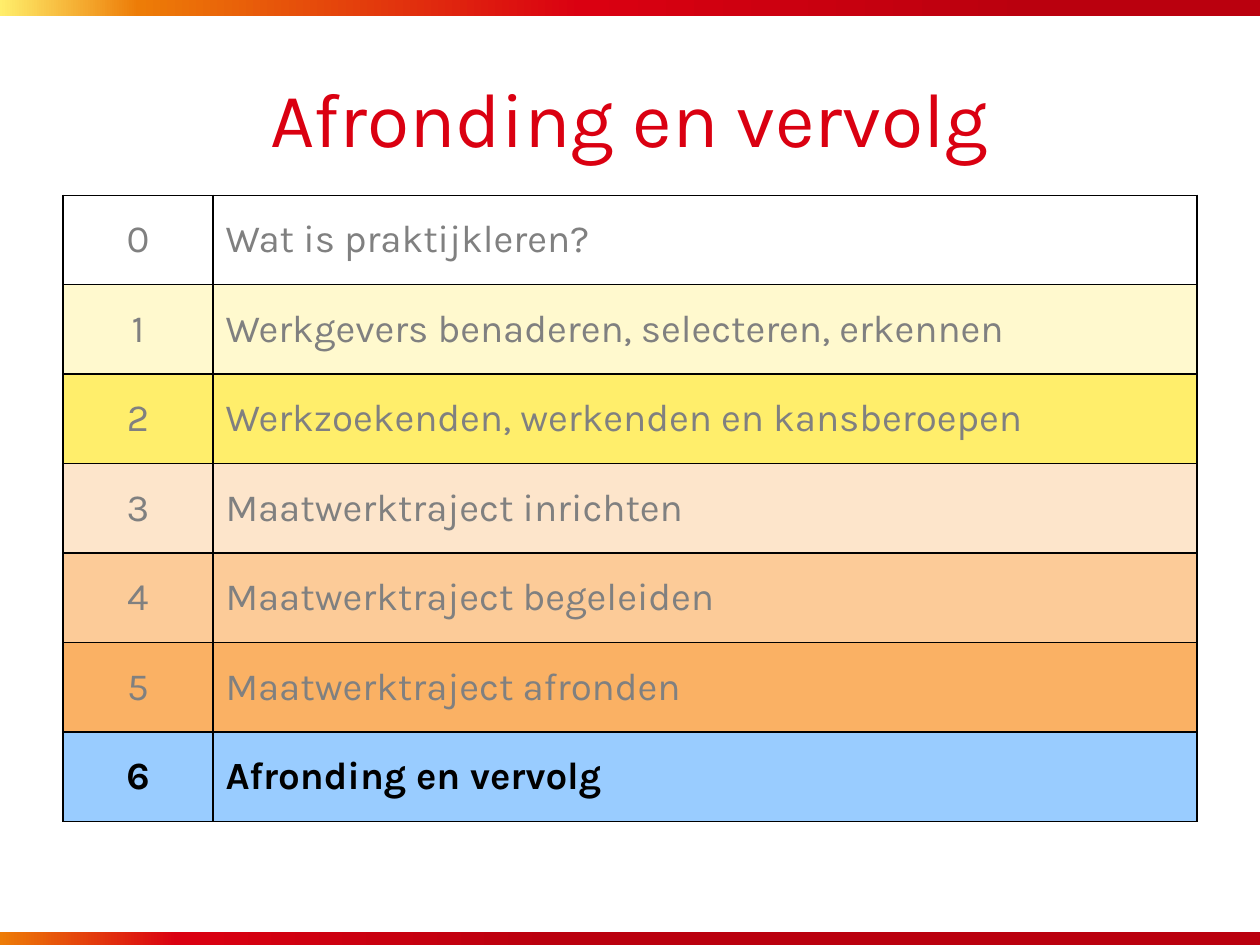
"""Build the agenda slide with its last chapter highlighted."""
from dataclasses import dataclass

from lxml.etree import SubElement
from pptx import Presentation
from pptx.dml.color import RGBColor as Rgb
from pptx.enum.shapes import MSO_SHAPE as Shape
from pptx.enum.text import MSO_ANCHOR as Anchor, PP_ALIGN as Align
from pptx.oxml.ns import qn
from pptx.util import Inches, Pt

TITLE = "Afronding en vervolg"
CHAPTERS = [
    ("Wat is praktijkleren?", None),
    ("Werkgevers benaderen, selecteren, erkennen", "FFF9CE"),
    ("Werkzoekenden, werkenden en kansberoepen", "FFEE6B"),
    ("Maatwerktraject inrichten", "FDE5CB"),
    ("Maatwerktraject begeleiden", "FCCB98"),
    ("Maatwerktraject afronden", "FAB164"),
    ("Afronding en vervolg", "99CCFF"),
]
CURRENT = len(CHAPTERS) - 1
BANDS = [
    (0, [(0, "FFEE6B"), (11, "ED7C07"), (46, "DA0011"), (82, "BA000E")]),
    (7.4, [(0, "ED7C07"), (14, "DA0011"), (44, "BA000E")]),
]


@dataclass(frozen=True)
class Theme:
    font: str = "Karla"
    title: str = "DA0011"
    muted: str = "808080"
    active: str = "000000"
    border: str = "000000"
    title_size: int = 44
    cell_size: int = 22
    border_width: int = 1


THEME = Theme()
WIDTH, HEIGHT = 10, 7.5
MARGIN = WIDTH / 20
CONTENT_WIDTH = WIDTH - 2 * MARGIN
TITLE_TOP, AGENDA_TOP = 0.3, 1.55
ROW_HEIGHT = 0.71
NUMBER_WIDTH = 1.19
BAND_WIDTH, BAND_HEIGHT = 10.02, 0.13


def style(paragraph, size, color, align, bold=False):
    paragraph.alignment = align
    font = paragraph.font
    font.name, font.size, font.bold = THEME.font, Pt(size), bold
    font.color.rgb = Rgb.from_string(color)


def add_band(slide, top, stops):
    band = slide.shapes.add_shape(
        Shape.RECTANGLE, 0, Inches(top), Inches(BAND_WIDTH), Inches(BAND_HEIGHT))
    band.shadow.inherit = False
    band.line.fill.background()
    band.fill.gradient()
    band.fill.gradient_angle = 0
    stop_list = band.element.spPr.find(".//" + qn("a:gsLst"))
    stop_list.clear()
    for percent, color in stops:
        stop = SubElement(stop_list, qn("a:gs"), pos=str(percent * 1000))
        SubElement(stop, qn("a:srgbClr"), val=color)


def add_title(slide):
    title = slide.shapes.add_textbox(
        Inches(MARGIN), Inches(TITLE_TOP), Inches(CONTENT_WIDTH), Inches(AGENDA_TOP - TITLE_TOP))
    frame = title.text_frame
    frame.word_wrap, frame.vertical_anchor = True, Anchor.MIDDLE
    frame.text = TITLE
    style(frame.paragraphs[0], THEME.title_size, THEME.title, Align.CENTER)


def add_borders(cell):
    properties = cell._tc.get_or_add_tcPr()
    for side in ("L", "R", "T", "B"):
        edge = SubElement(properties, qn(f"a:ln{side}"), w=str(Pt(THEME.border_width)))
        SubElement(SubElement(edge, qn("a:solidFill")), qn("a:srgbClr"), val=THEME.border)


def add_agenda(slide):
    agenda = slide.shapes.add_table(
        len(CHAPTERS), 2, Inches(MARGIN), Inches(AGENDA_TOP),
        Inches(CONTENT_WIDTH), Inches(ROW_HEIGHT * len(CHAPTERS))).table
    agenda.first_row = agenda.horz_banding = False
    agenda.columns[0].width = Inches(NUMBER_WIDTH)
    agenda.columns[1].width = Inches(CONTENT_WIDTH - NUMBER_WIDTH)
    for number, (chapter, tint) in enumerate(CHAPTERS):
        current = number == CURRENT
        color = THEME.active if current else THEME.muted
        for column, (text, align) in enumerate([(str(number), Align.CENTER), (chapter, Align.LEFT)]):
            cell = agenda.cell(number, column)
            cell.text, cell.vertical_anchor = text, Anchor.MIDDLE
            style(cell.text_frame.paragraphs[0], THEME.cell_size, color, align, current)
            add_borders(cell)
            if tint:
                cell.fill.solid()
                cell.fill.fore_color.rgb = Rgb.from_string(tint)
            else:
                cell.fill.background()


def main():
    deck = Presentation()
    deck.slide_width, deck.slide_height = Inches(WIDTH), Inches(HEIGHT)
    slide = deck.slides.add_slide(deck.slide_layouts[6])
    for top, stops in BANDS:
        add_band(slide, top, stops)
    add_title(slide)
    add_agenda(slide)
    deck.save("out.pptx")


if __name__ == "__main__":
    main()
